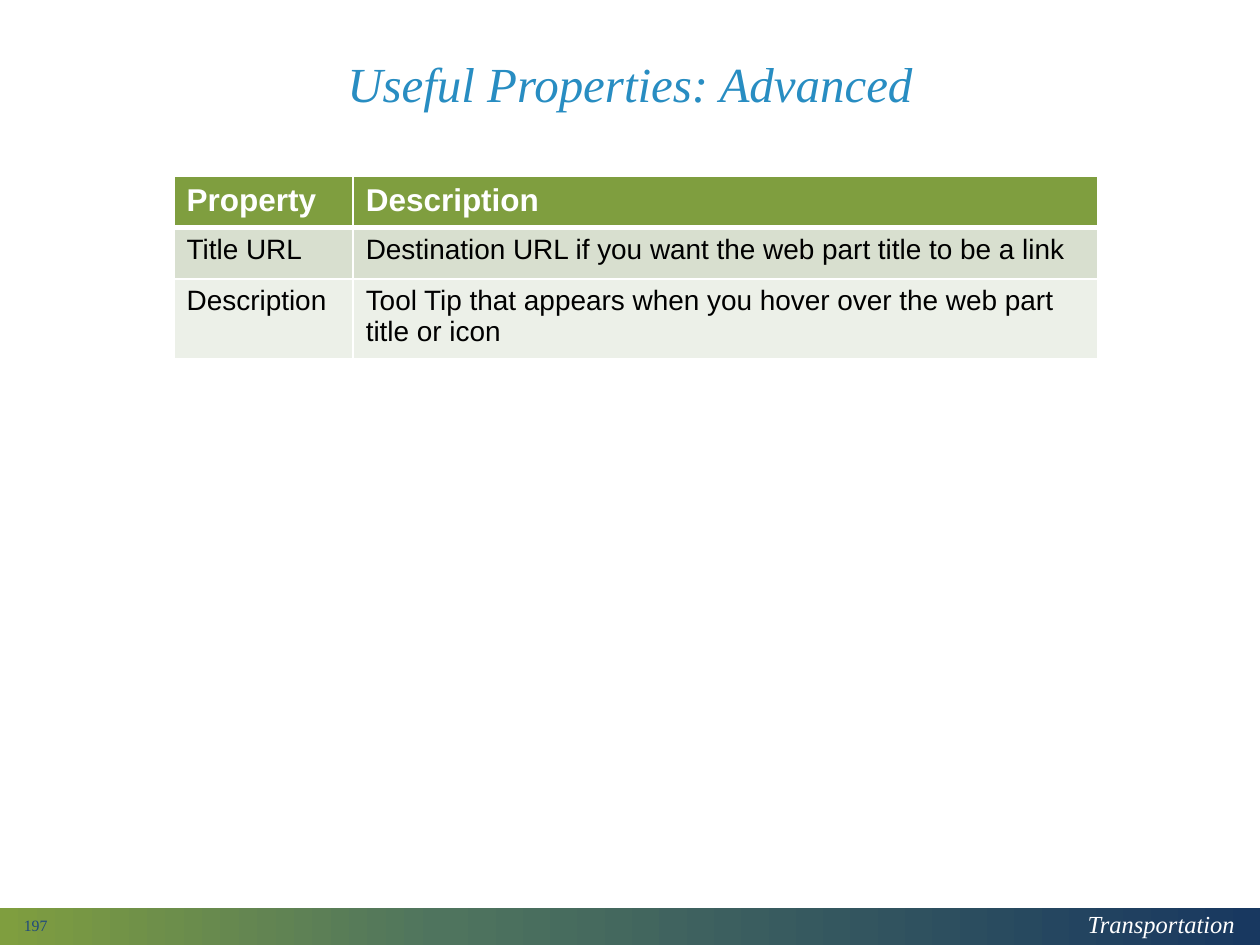
import copy

import pptx
import pptx.dml.color
import pptx.enum.shapes
import pptx.enum.text
import pptx.oxml
import pptx.oxml.ns
import pptx.util
from pptx.util import Cm

# Content
TITLE = "Useful Properties: Advanced"
PAGE_NUMBER = "197"
FOOTER = "Transportation"
ROWS = [
    ("Property", "Description"),
    ("Title URL", "Destination URL if you want the web part title to be a link"),
    ("Description", "Tool Tip that appears when you hover over the web part title or icon"),
]

# Style
SERIF, SANS = "Times New Roman", "Arial"
BAR_STOPS = [(0, "7F9E3F"), (0.35, "4F745E"), (1, "183860")]
ROW_FILLS = ["7F9E3F", "D8DFCF", "ECF0E8"]
ROW_HEIGHTS = [1.03, 1.03, 1.5]
COLUMN_WIDTHS = [3.61, 15.01]
ALIGN = pptx.enum.text.PP_ALIGN


def color(hex_string):
    return pptx.dml.color.RGBColor.from_string(hex_string)


def format_runs(paragraph, font_name, size, hex_string, bold=False, italic=False):
    for run in paragraph.runs:
        run.font.name = font_name
        run.font.size = pptx.util.Pt(size)
        run.font.color.rgb = color(hex_string)
        run.font.bold = bold
        run.font.italic = italic


def add_text(slide, text, box, size, hex_string, align, middle=True, margin=0.25, italic=True):
    shape = slide.shapes.add_textbox(*(Cm(length) for length in box))
    text_frame = shape.text_frame
    text_frame.text = text
    text_frame.word_wrap = True
    text_frame.margin_left = text_frame.margin_right = Cm(margin)
    if middle:
        text_frame.vertical_anchor = pptx.enum.text.MSO_ANCHOR.MIDDLE
    paragraph = text_frame.paragraphs[0]
    paragraph.alignment = align
    format_runs(paragraph, SERIF, size, hex_string, italic=italic)
    return paragraph


def add_bar(slide):
    bar = slide.shapes.add_shape(
        pptx.enum.shapes.MSO_SHAPE.RECTANGLE, 0, Cm(18.3), Cm(25.4), Cm(0.75))
    bar.shadow.inherit = False
    bar.line.fill.background()
    bar.fill.gradient()
    bar.fill.gradient_angle = 0
    # The default gradient has two stops; add a middle one
    first_stop = bar._element.spPr.find(".//" + pptx.oxml.ns.qn("a:gs"))
    first_stop.addnext(copy.deepcopy(first_stop))
    for stop, (position, hex_string) in zip(bar.fill.gradient_stops, BAR_STOPS):
        stop.position = position
        stop.color.rgb = color(hex_string)


def set_borders(cell, widths):
    """Draw white borders; they must come before the fill in the cell properties."""
    properties = cell._tc.get_or_add_tcPr()
    for index, (side, points) in enumerate(widths.items()):
        properties.insert(index, pptx.oxml.parse_xml(
            f'<a:ln{side} {pptx.oxml.ns.nsdecls("a")} w="{pptx.util.Pt(points)}">'
            f'<a:solidFill><a:srgbClr val="FFFFFF"/></a:solidFill></a:ln{side}>'))


def add_property_table(slide):
    table = slide.shapes.add_table(
        len(ROWS), len(COLUMN_WIDTHS), Cm(3.51), Cm(3.56),
        Cm(sum(COLUMN_WIDTHS)), Cm(sum(ROW_HEIGHTS))).table
    for column, width in zip(table.columns, COLUMN_WIDTHS):
        column.width = Cm(width)
    for row_index, texts in enumerate(ROWS):
        header = row_index == 0
        table.rows[row_index].height = Cm(ROW_HEIGHTS[row_index])
        for column_index, text in enumerate(texts):
            cell = table.cell(row_index, column_index)
            cell.text_frame.text = text
            format_runs(cell.text_frame.paragraphs[0], SANS, 18 if header else 16,
                        "FFFFFF" if header else "000000", bold=header)
            cell.fill.solid()
            cell.fill.fore_color.rgb = color(ROW_FILLS[row_index])
            set_borders(cell, {"L": 1, "R": 1, "T": 3 if row_index == 1 else 1,
                               "B": 3 if header else 1})


def main():
    presentation = pptx.Presentation()
    presentation.slide_width, presentation.slide_height = Cm(25.4), Cm(19.05)
    slide = presentation.slides.add_slide(presentation.slide_layouts[6])

    # Footer bar and its label
    add_bar(slide)
    add_text(slide, FOOTER, (21.62, 18.21, 3.58, 0.86), 14, "FFFFFF", ALIGN.CENTER,
             middle=False, margin=0)

    # Title and page number
    title = add_text(slide, TITLE, (1.75, 0.28, 21.9, 2.95), 28, "288DC2", ALIGN.CENTER)
    title.line_spacing = 0.9
    add_text(slide, PAGE_NUMBER, (0.23, 18.47, 5.72, 0.38), 9, "1F497D", ALIGN.LEFT,
             italic=False)

    add_property_table(slide)
    presentation.save("out.pptx")


if __name__ == "__main__":
    main()
